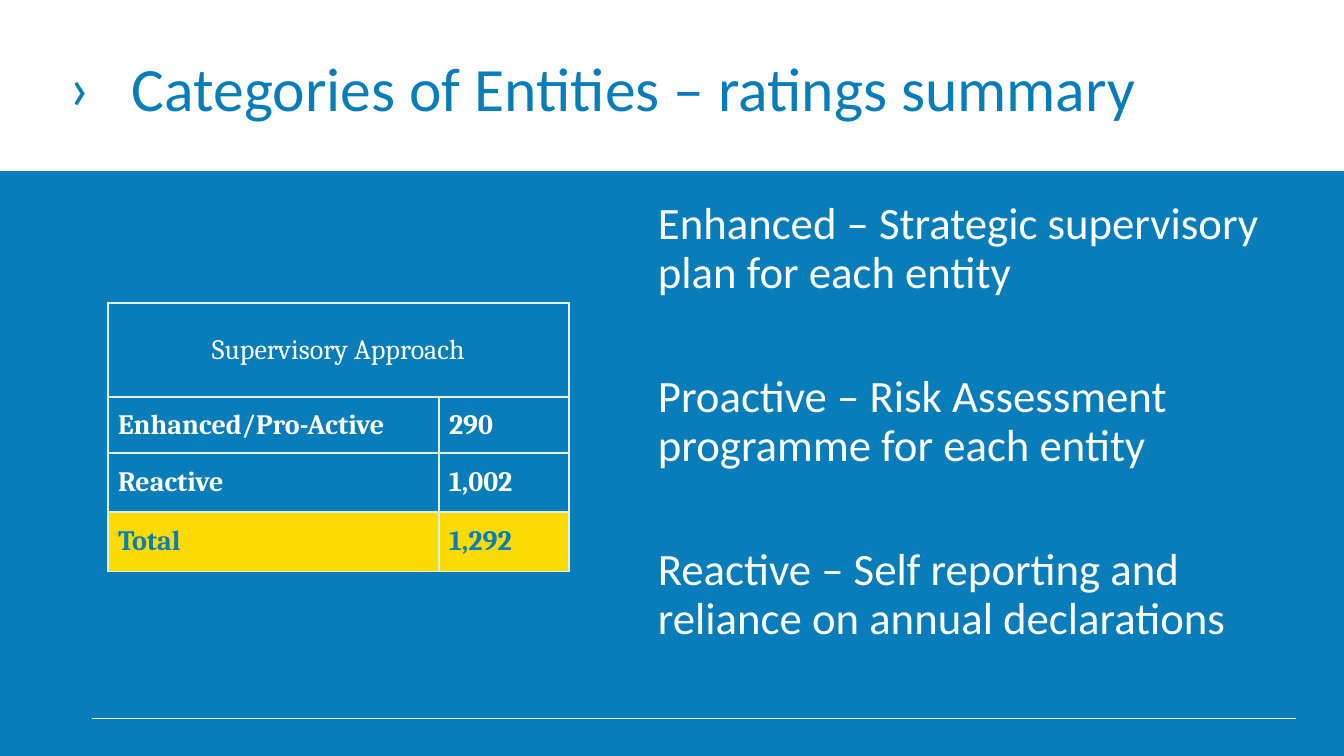
from lxml import etree
from pptx import Presentation
from pptx import util as u
from pptx.dml.color import RGBColor
from pptx.enum import shapes, text
from pptx.oxml.ns import qn

TITLE = "Categories of Entities – ratings summary"
APPROACHES = [
    "Enhanced – Strategic supervisory plan for each entity",
    "Proactive – Risk Assessment programme for each entity",
    "Reactive – Self reporting and reliance on annual declarations",
]
TABLE_HEAD = "Supervisory Approach"
RATINGS = [("Enhanced/Pro-Active", "290"), ("Reactive", "1,002"), ("Total", "1,292")]
COLUMNS = [331, 130]
ROWS = [94, 56, 59, 60]
COLOURS = {"blue": "087DBA", "white": "FFFFFF", "yellow": "FCDC00", "border": "E2F0D9"}
WIDTH, HEIGHT = 1344, 756
SCALE = 12192000 / WIDTH


def px(length):
    return u.Emu(round(length * SCALE))


def rgb(name):
    return RGBColor.from_string(COLOURS[name])


def add_run(para, words, size, font, colour, bold=False):
    span = para.add_run()
    span.text = words
    span.font.size = u.Pt(size)
    span.font.name = font
    span.font.bold = bold
    span.font.color.rgb = rgb(colour)


def add_frame(page, left, top, width, height):
    frame = page.shapes.add_textbox(px(left), px(top), px(width), px(height)).text_frame
    frame.word_wrap = True
    return frame


def add_background(page):
    panel = page.shapes.add_shape(
        shapes.MSO_SHAPE.RECTANGLE, 0, px(171), px(WIDTH), px(HEIGHT - 171))
    panel.shadow.inherit = False
    panel.fill.solid()
    panel.fill.fore_color.rgb = rgb("blue")
    panel.line.fill.background()
    rule = page.shapes.add_connector(
        shapes.MSO_CONNECTOR.STRAIGHT, px(92), px(718), px(1296), px(718))
    rule.line.color.rgb = rgb("white")
    rule.line.width = u.Pt(0.25)
    etree.SubElement(rule._element.spPr, qn("a:effectLst"))


def add_title(page):
    frame = add_frame(page, 60, 45, 1159, 94)
    frame.vertical_anchor = text.MSO_ANCHOR.MIDDLE
    para = frame.paragraphs[0]
    para.line_spacing = 0.9
    props = para._p.get_or_add_pPr()
    indent = px(62)
    props.set("marL", str(indent))
    props.set("indent", str(-indent))
    etree.SubElement(props, qn("a:buFont"), typeface="Calibri")
    etree.SubElement(props, qn("a:buChar"), char="›")
    add_run(para, TITLE, 44, "Calibri", "blue")


def add_approaches(page):
    frame = add_frame(page, 648, 196, 659, 486)
    for index, words in enumerate(APPROACHES):
        para = frame.add_paragraph() if index else frame.paragraphs[0]
        para.line_spacing = 0.9
        if index:
            para.space_before = u.Pt(54.5)
        add_run(para, words, 32, "Calibri", "white")


def fill_cell(cell, words, fill, colour, bold):
    cell.vertical_anchor = text.MSO_ANCHOR.MIDDLE
    add_run(cell.text_frame.paragraphs[0], words, 20, "Cambria", colour, bold)
    props = cell._tc.get_or_add_tcPr()
    for side in ("a:lnL", "a:lnR", "a:lnT", "a:lnB"):
        border = etree.SubElement(props, qn(side), w=str(u.Pt(1)))
        solid = etree.SubElement(border, qn("a:solidFill"))
        etree.SubElement(solid, qn("a:srgbClr"), val=COLOURS["border"])
    cell.fill.solid()
    cell.fill.fore_color.rgb = rgb(fill)


def add_ratings(page):
    table = page.shapes.add_table(
        len(ROWS), len(COLUMNS), px(108), px(303), px(sum(COLUMNS)), px(sum(ROWS))).table
    for column, width in zip(table.columns, COLUMNS):
        column.width = px(width)
    for row, height in zip(table.rows, ROWS):
        row.height = px(height)
    table.cell(0, 0).merge(table.cell(0, 1))
    for r, values in enumerate([(TABLE_HEAD, "")] + RATINGS):
        fill, colour = ("yellow", "blue") if values[0] == "Total" else ("blue", "white")
        for c, words in enumerate(values):
            fill_cell(table.cell(r, c), words, fill, colour, r > 0)
    table.cell(0, 0).text_frame.paragraphs[0].alignment = text.PP_ALIGN.CENTER


def main():
    deck = Presentation()
    deck.slide_width, deck.slide_height = px(WIDTH), px(HEIGHT)
    page = deck.slides.add_slide(deck.slide_layouts[6])
    add_background(page)
    add_approaches(page)
    add_title(page)
    add_ratings(page)
    deck.save("out.pptx")


if __name__ == "__main__":
    main()
